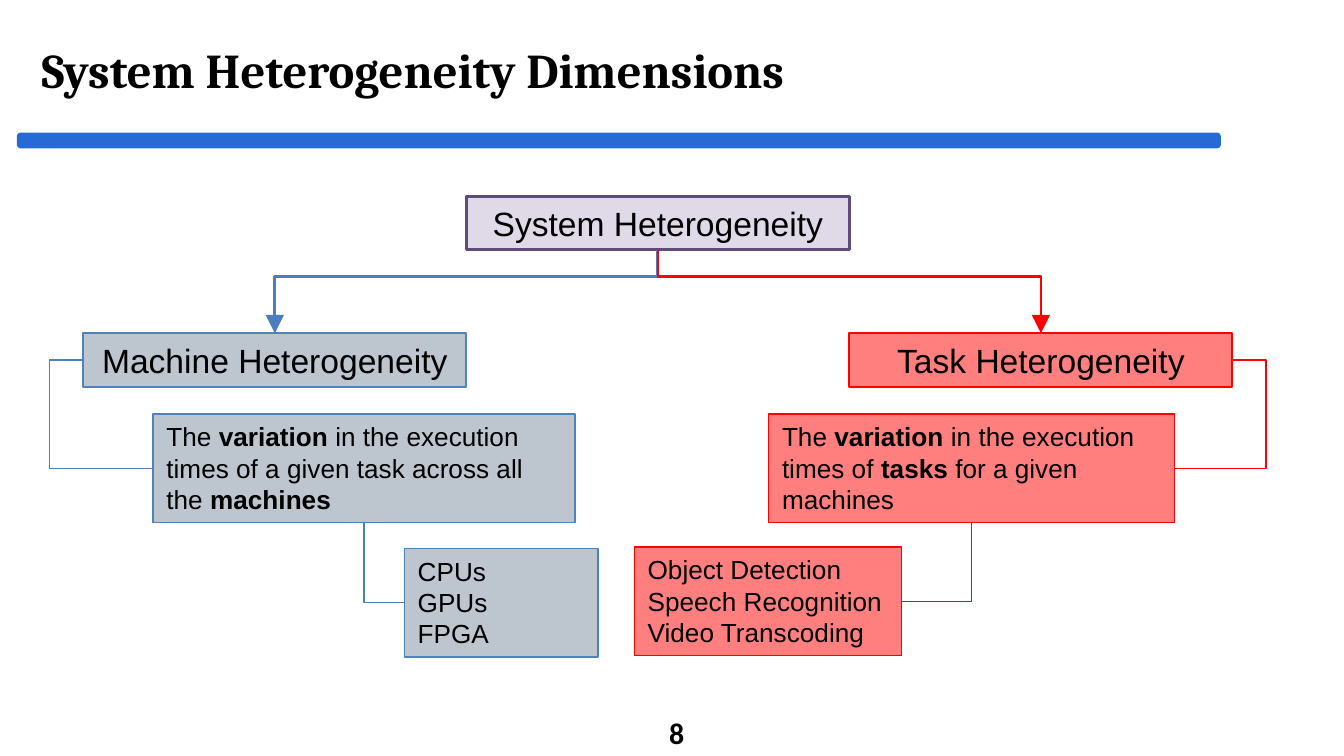
from lxml.etree import SubElement
from pptx import Presentation
from pptx.dml.color import RGBColor
from pptx.enum.shapes import MSO_CONNECTOR as CONNECTOR, MSO_SHAPE as SHAPE
from pptx.enum.text import MSO_ANCHOR as ANCHOR, PP_ALIGN as ALIGN
from pptx.oxml.ns import qn
from pptx.util import Inches, Pt

COLOURS = {
    "text": "000000", "bar": "286AD4",
    "system_fill": "B3A2C7", "system_line": "604A7B",
    "machine_fill": "254061", "machine_line": "4F81BD", "machine_link": "4B7EBC",
    "task_fill": "FF0000", "task_line": "FF0000", "task_link": "FF0000",
}
OPACITY = {"system": 40, "machine": 30, "task": 50}
TITLE = "System Heterogeneity Dimensions"
PAGE_NUMBER = "8"
TOP, LEFT, BOTTOM, RIGHT = range(4)

HEADING_SIZE = (2.85, 0.4)
HEADINGS = [
    ("machine", "Machine Heterogeneity", (0.62, 2.48), 1),
    ("task", "Task Heterogeneity", (6.32, 2.48), 1),
    ("system", "System Heterogeneity", (3.47, 1.46), 1.5),
]
DETAILS = [
    ("machine", "definition", (1.14, 3.08, 3.14, 0.81),
     [[("The ", False), ("variation", True),
       (" in the execution times of a given task across all the", False), (" machines", True)]]),
    ("task", "definition", (5.72, 3.08, 3.02, 0.81),
     [[("The ", False), ("variation", True), (" in the execution times of ", False),
       ("tasks", True), (" for a given machines", False)]]),
    ("machine", "examples", (3.01, 4.08, 1.44, 0.81), ["CPUs", "GPUs", "FPGA"]),
    ("task", "examples", (4.72, 4.07, 1.99, 0.81),
     ["Object Detection", "Speech Recognition", "Video Transcoding"]),
]
BRANCHES = [("machine", LEFT, -0.48), ("task", RIGHT, -0.58)]


def colour(name):
    return RGBColor.from_string(COLOURS[name])


def write(shape, paragraphs, size, font="Arial", bold=False, align=ALIGN.LEFT, anchor=ANCHOR.TOP):
    frame = shape.text_frame
    frame.word_wrap = True
    frame.vertical_anchor = anchor
    for index, runs in enumerate(paragraphs):
        paragraph = frame.paragraphs[0] if index == 0 else frame.add_paragraph()
        paragraph.alignment = align
        for words, is_bold in [(runs, bold)] if isinstance(runs, str) else runs:
            run = paragraph.add_run()
            run.text = words
            run.font.name, run.font.size, run.font.bold = font, Pt(size), is_bold
            run.font.color.rgb = colour("text")


def add_box(shapes, kind, place, fill, line, weight, opacity=100):
    shape = shapes.add_shape(kind, *map(Inches, place))
    shape.shadow.inherit = False
    shape.fill.solid()
    shape.fill.fore_color.rgb = colour(fill)
    if opacity < 100:
        solid = shape._element.spPr.find(qn("a:solidFill"))
        SubElement(solid[0], qn("a:alpha"), val=str(opacity * 1000))
    shape.line.color.rgb = colour(line)
    shape.line.width = Pt(weight)
    return shape


def add_elbow(shapes, start, start_side, end, end_side, line, weight=0.75, bend=None, arrow=False):
    connector = shapes.add_connector(CONNECTOR.ELBOW, 0, 0, 0, 0)
    connector.begin_connect(start, start_side)
    connector.end_connect(end, end_side)
    connector.line.color.rgb = colour(line)
    connector.line.width = Pt(weight)
    properties = connector._element.spPr
    if start_side == BOTTOM:
        across = connector.end_x - connector.begin_x
        down = connector.end_y - connector.begin_y
        middle_x = (connector.begin_x + connector.end_x) // 2
        middle_y = (connector.begin_y + connector.end_y) // 2
        connector.width, connector.height = abs(down), abs(across)
        connector.left = middle_x - abs(down) // 2
        connector.top = middle_y - abs(across) // 2
        turn = properties.find(qn("a:xfrm"))
        turn.set("rot", str((90 if across < 0 else 270) * 60000))
        turn.set("flipH", "0" if across < 0 else "1")
    geometry = properties.find(qn("a:prstGeom"))
    if bend is None:
        geometry.set("prst", "bentConnector2")
    else:
        guides = geometry.find(qn("a:avLst"))
        SubElement(guides, qn("a:gd"), name="adj1", fmla=f"val {round(bend * 100000)}")
    if arrow:
        SubElement(properties.find(qn("a:ln")), qn("a:tailEnd"), type="triangle", w="lg", len="lg")
    SubElement(properties, qn("a:effectLst"))


presentation = Presentation()
presentation.slide_width = Inches(10)
presentation.slide_height = presentation.slide_width * 9 // 16
slide = presentation.slides.add_slide(presentation.slide_layouts[5])
shapes = slide.shapes

title = shapes.title
title.left, title.top, title.width, title.height = map(Inches, (0.21, 0.1, 8.9, 0.83))
write(title, [TITLE], 26, font="Cambria", bold=True, anchor=ANCHOR.MIDDLE)
add_box(shapes, SHAPE.ROUNDED_RECTANGLE, (0.14, 1, 8.93, 0.09), "bar", "bar", 2)
page_number = shapes.add_textbox(*map(Inches, (3.87, 5.3, 2.33, 0.3)))
write(page_number, [PAGE_NUMBER], 16, font="Calibri", bold=True,
      align=ALIGN.CENTER, anchor=ANCHOR.MIDDLE)

boxes = {}
for theme, words, position, weight in HEADINGS:
    box = add_box(shapes, SHAPE.RECTANGLE, position + HEADING_SIZE,
                  f"{theme}_fill", f"{theme}_line", weight, OPACITY[theme])
    write(box, [words], 18, align=ALIGN.CENTER)
    boxes[theme, "heading"] = box
for theme, role, place, paragraphs in DETAILS:
    box = add_box(shapes, SHAPE.RECTANGLE, place,
                  f"{theme}_fill", f"{theme}_line", 0.75, OPACITY[theme])
    write(box, paragraphs, 14)
    boxes[theme, role] = box

for theme, side, bend in BRANCHES:
    heading, definition, examples = (boxes[theme, role] for role in ("heading", "definition", "examples"))
    link = f"{theme}_link"
    add_elbow(shapes, boxes["system", "heading"], BOTTOM, heading, TOP, link, 1.5, 0.32, arrow=True)
    add_elbow(shapes, heading, side, definition, side, link, bend=bend)
    add_elbow(shapes, definition, BOTTOM, examples, side, link)

presentation.save("out.pptx")
